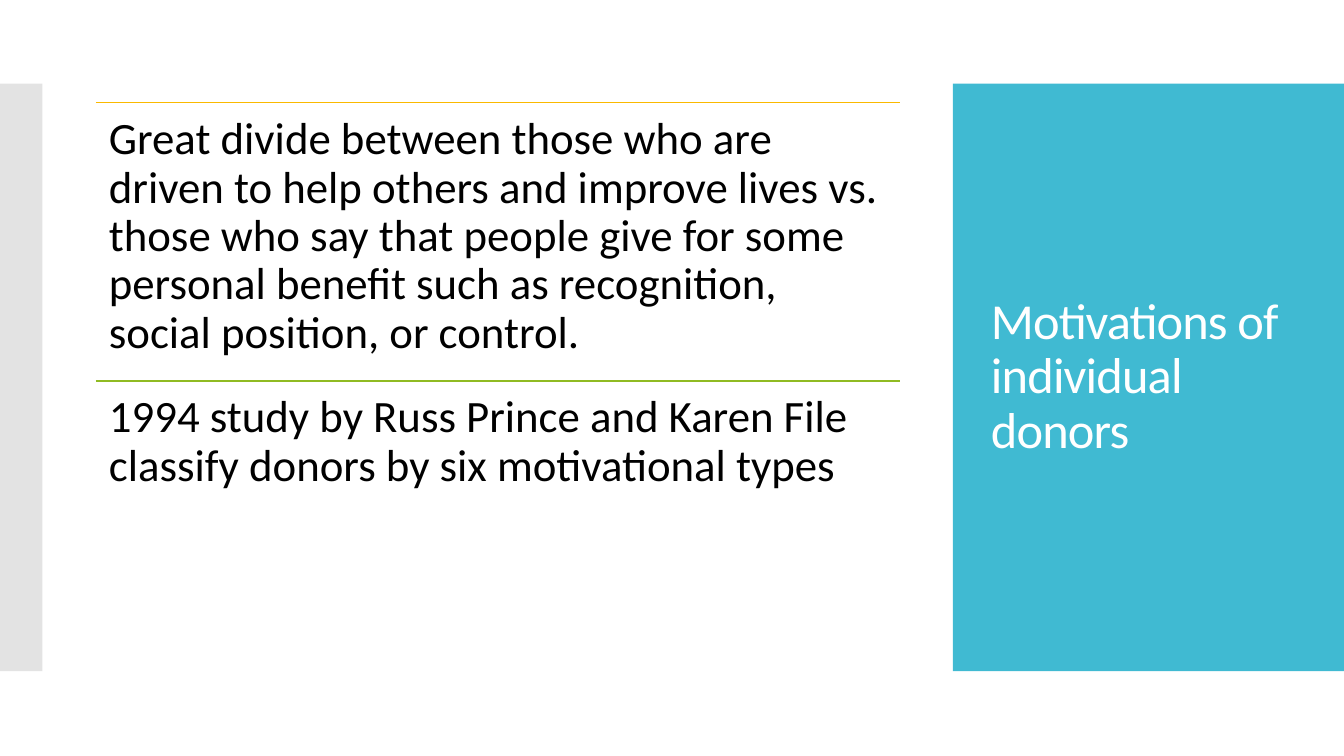
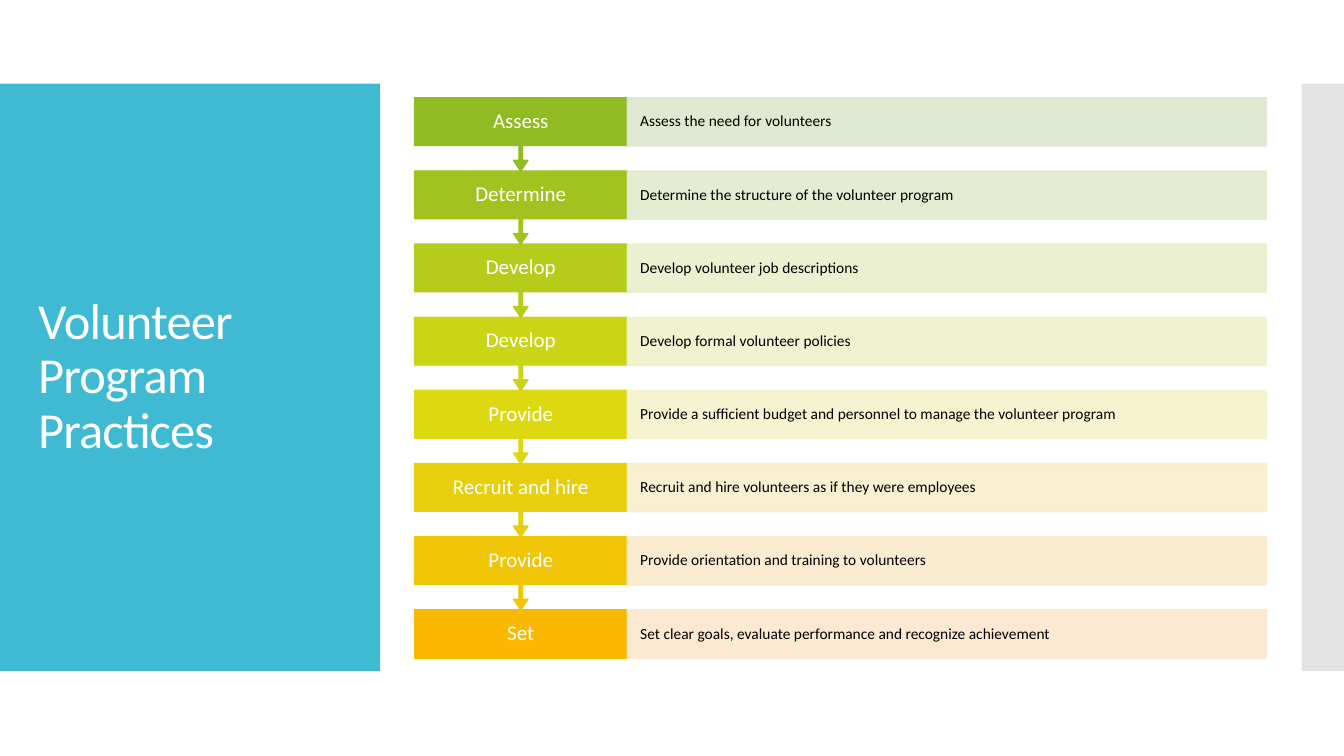
from dataclasses import dataclass

from lxml import etree
from pptx import Presentation
from pptx import util as u
from pptx.dml.color import RGBColor
from pptx.enum import shapes, text
from pptx.oxml import ns


@dataclass(frozen=True)
class Theme:
    """Colours, font and type sizes."""
    font: str = "Calibri"
    teal: str = "40BAD2"
    grey: str = "C8C8C8"
    white: str = "FFFFFF"
    black: str = "000000"
    gold: str = "FAB900"
    green: str = "90BB23"
    title: float = 36
    body: float = 32
    label: float = 15
    detail: float = 11
    rule: float = 0.85


class Deck:
    """Builds slides in one style."""

    wide, high = 13.33, 7.5
    top, tall = 0.83, 5.83
    strip = 0.42

    def __init__(self, theme):
        """Start an empty deck."""
        self.theme = theme
        self.prs = Presentation()
        self.prs.slide_width = u.Inches(self.wide)
        self.prs.slide_height = u.Inches(self.high)
        self.slide = None

    def page(self, title, width, right=False):
        """Add a slide with its title panel and the grey strip opposite."""
        self.slide = self.prs.slides.add_slide(self.prs.slide_layouts[6])
        left = self.wide - width if right else 0
        edge = 0 if right else self.wide - self.strip
        self.block((left, self.top, width, self.tall), self.theme.teal)
        self.block((edge, self.top, self.strip, self.tall), self.theme.grey, alpha=50)
        runs = self.note((left + 0.28, 1.23, 3.22, 5.03), title, self.theme.title,
                         self.theme.white, pad=(0.1, 0.05), mid=True)
        for run in runs:
            run.font._element.set("spc", "-60")

    def block(self, box, fill, alpha=100, edge=False,
              kind=shapes.MSO_SHAPE.RECTANGLE):
        """Add a filled shape, outlined in its own colour if asked."""
        shape = self.slide.shapes.add_shape(kind, *map(u.Inches, box))
        shape.shadow.inherit = False
        shape.fill.solid()
        shape.fill.fore_color.rgb = RGBColor.from_string(fill)
        if edge:
            shape.line.color.rgb = RGBColor.from_string(fill)
            shape.line.width = u.Pt(self.theme.rule)
        else:
            shape.line.fill.background()
        if alpha < 100:
            for tone in shape._element.spPr.iter(ns.qn("a:srgbClr")):
                etree.SubElement(tone, ns.qn("a:alpha")).set("val", str(alpha * 1000))
        return shape

    def label(self, shape, words, size, color, pad, mid=False, center=False):
        """Set and style the text of a shape."""
        frame = shape.text_frame
        frame.text = words
        frame.word_wrap = True
        frame.margin_left = frame.margin_right = u.Inches(pad[0])
        frame.margin_top = frame.margin_bottom = u.Inches(pad[1])
        frame.vertical_anchor = text.MSO_ANCHOR.MIDDLE if mid else text.MSO_ANCHOR.TOP
        para = frame.paragraphs[0]
        para.line_spacing = 0.9
        para.alignment = text.PP_ALIGN.CENTER if center else text.PP_ALIGN.LEFT
        for run in para.runs:
            run.font.name = self.theme.font
            run.font.size = u.Pt(size)
            run.font.color.rgb = RGBColor.from_string(color)
        return para.runs

    def note(self, box, words, size, color, pad, mid=False):
        """Add a text box."""
        shape = self.slide.shapes.add_textbox(*map(u.Inches, box))
        return self.label(shape, words, size, color, pad, mid)

    def rule(self, left, top, width, color):
        """Add a thin horizontal line."""
        ends = map(u.Inches, (left, top, left + width, top))
        line = self.slide.shapes.add_connector(shapes.MSO_CONNECTOR.STRAIGHT, *ends)
        line.line.color.rgb = RGBColor.from_string(color)
        line.line.width = u.Pt(self.theme.rule)
        etree.SubElement(line._element.spPr, ns.qn("a:effectLst"))

    def point(self, top, words, color):
        """Add a ruled paragraph of body text."""
        left, width = 0.95, 7.98
        self.rule(left, top, width, color)
        self.note((left, top, width, 2.76), words, self.theme.body,
                  self.theme.black, pad=(0.13, 0.13))

    def step(self, top, name, detail, fill, tint, last):
        """Add a labelled step, with an arrow down unless it is the last."""
        left, width, height = 4.11, 2.11, 0.48
        if last:
            head = self.block((left, top, width, height), fill, edge=True)
        else:
            head = self.block((left, top, width, 0.73), fill, edge=True,
                              kind=shapes.MSO_SHAPE.DOWN_ARROW_CALLOUT)
            for i, value in enumerate((0.05, 0.1, 0.15, 0.65)):
                head.adjustments[i] = value
        self.label(head, name, self.theme.label, self.theme.white,
                   pad=(0.15, 0), mid=True, center=True)
        bar = self.block((left + width, top, 6.34, height), tint, alpha=90, edge=True)
        self.label(bar, detail, self.theme.detail, self.theme.black,
                   pad=(0.13, 0), mid=True)


STEPS = [
    ("Assess", "Assess the need for volunteers", "90BB23", "DCE7CD"),
    ("Determine", "Determine the structure of the volunteer program", "A2C31F", "E2EBCC"),
    ("Develop", "Develop volunteer job descriptions", "B5CC1A", "E9EFCC"),
    ("Develop", "Develop formal volunteer policies", "CBD515", "F0F2CB"),
    ("Provide", "Provide a sufficient budget and personnel to manage the volunteer program",
     "DED810", "F5F2CB"),
    ("Recruit and hire", "Recruit and hire volunteers as if they were employees",
     "E7D00B", "F8EFCB"),
    ("Provide", "Provide orientation and training to volunteers", "F0C606", "FBEBCC"),
    ("Set", "Set clear goals, evaluate performance and recognize achievement",
     "FAB900", "FDE6CC"),
]


def main():
    """Build and save both slides."""
    theme = Theme()
    deck = Deck(theme)

    deck.page("Motivations of individual donors", 3.88, right=True)
    deck.point(1.02, "Great divide between those who are driven to help others and "
               "improve lives vs. those who say that people give for some personal "
               "benefit such as recognition, social position, or control.", theme.gold)
    deck.point(3.78, "1994 study by Russ Prince and Karen File classify donors by "
               "six motivational types", theme.green)

    deck.page("Volunteer Program Practices", 3.77)
    final = len(STEPS) - 1
    pitch = (6.05 - 0.97) / final
    for i, row in reversed(list(enumerate(STEPS))):
        deck.step(0.97 + i * pitch, *row, last=i == final)

    deck.prs.save("out.pptx")


if __name__ == "__main__":
    main()
